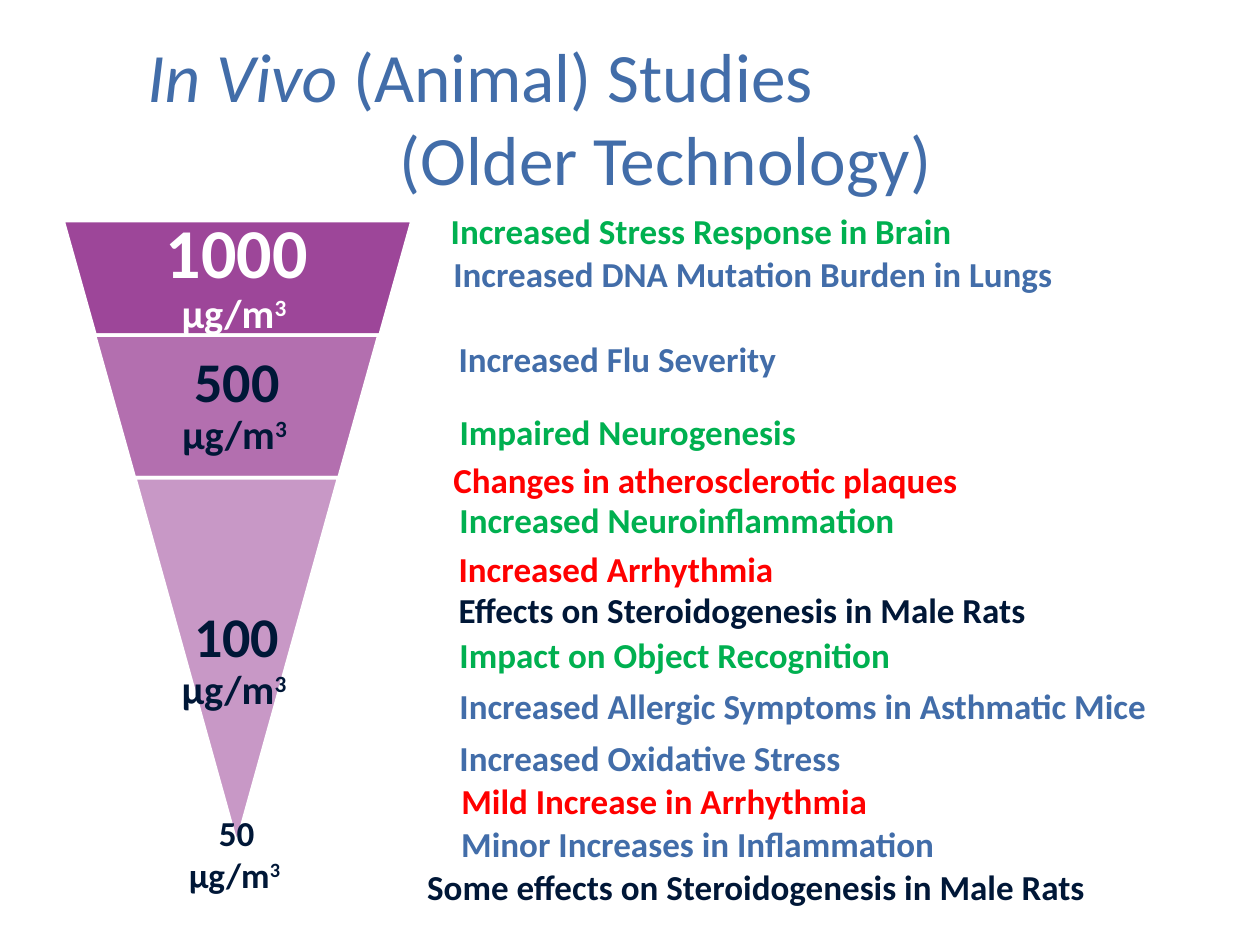
from lxml import etree
from pptx import Presentation
from pptx.dml.color import RGBColor
from pptx.enum.shapes import MSO_SHAPE
from pptx.enum.text import MSO_ANCHOR, MSO_AUTO_SIZE as FIT, PP_ALIGN
from pptx.oxml.ns import qn
from pptx.util import Pt

FONT = "Calibri"
WHITE = RGBColor(0xFF, 0xFF, 0xFF)
PURPLE = RGBColor(0x93, 0x32, 0x8E)
NAVY = RGBColor(0x00, 0x17, 0x37)
BLUE = RGBColor(0x42, 0x6D, 0xA9)
RED = RGBColor(0xFF, 0x00, 0x00)
GREEN = RGBColor(0x00, 0xB0, 0x50)

# Dose bands: (amount, left, top, width, height), slant, opacity %, size, colour, label left, label width
BANDS = [
    ("1000", (36, 126, 199.5, 65.5), 0.28, 90, 40, WHITE, 70.5, 129.5),
    ("500", (54, 191.5, 162.5, 81.5), 0.28, 70, 32, NAVY, 82.5, 106),
    ("100", (77, 273, 116.5, 209.5), 0.5, 50, 32, NAVY, 77, 116.5),
]

# Findings: text, left, top, width, colour
FINDINGS = [
    ("Increased Stress Response in Brain", 250.5, 116, 304, GREEN),
    ("Increased DNA Mutation Burden in Lungs", 252, 140.5, 360, BLUE),
    ("Increased Flu Severity", 255, 189.5, 198, BLUE),
    ("Impaired Neurogenesis", 255.5, 231, 209, GREEN),
    ("Changes in atherosclerotic plaques", 252, 258.5, 305, RED),
    ("Increased Neuroinflammation", 255.5, 281.5, 266, GREEN),
    ("Increased Arrhythmia", 255, 309.5, 201, RED),
    ("Effects on Steroidogenesis in Male Rats", 255, 332.5, 342, NAVY),
    ("Impact on Object Recognition", 255.5, 358.5, 263, GREEN),
    ("Increased Allergic Symptoms in Asthmatic Mice", 255.5, 387.5, 410.5, BLUE),
    ("Increased Oxidative Stress", 255.5, 417.5, 235, BLUE),
    ("Mild Increase in Arrhythmia", 256.5, 442, 248.5, RED),
    ("Minor Increases in Inflammation", 256.5, 466.5, 287.5, BLUE),
    ("Some effects on Steroidogenesis in Male Rats", 237, 491, 394.5, NAVY),
]


def add_run(p, text, size, color, **extra):
    r = p.add_run()
    r.text = text
    r.font.color.rgb = color
    for name, value in {"name": FONT, "size": Pt(size), "bold": True, **extra}.items():
        setattr(r.font, name, value)
    return r


def add_text_box(shapes, box, **frame):
    sp = shapes.add_textbox(*map(Pt, box))
    for name, value in {"word_wrap": True, **frame}.items():
        setattr(sp.text_frame, name, value)
    return sp.text_frame


def add_dose(p, amount, amount_size, unit_size, color):
    p.alignment = PP_ALIGN.CENTER
    add_run(p, amount + " ", amount_size, color)
    add_run(p, "µg/m", unit_size, color)
    r = add_run(p, "3 ", unit_size, color)
    r.font._element.set("baseline", "30000")


def add_title(slide, box):
    title = slide.shapes.title
    title.left, title.top, title.width, title.height = map(Pt, box)
    tf = title.text_frame
    for name, value in {"word_wrap": True, "auto_size": FIT.NONE,
                        "vertical_anchor": MSO_ANCHOR.MIDDLE}.items():
        setattr(tf, name, value)
    style = {"size": 39.6, "color": BLUE, "bold": False}
    # First line is indented, second is centred
    p = tf.paragraphs[0]
    p.alignment = PP_ALIGN.LEFT
    p._p.get_or_add_pPr().set("marL", str(Pt(41)))
    add_run(p, "In Vivo ", italic=True, **style)
    add_run(p, "(Animal) Studies", **style)
    p = tf.add_paragraph()
    p.alignment = PP_ALIGN.CENTER
    add_run(p, "(Older Technology)", **style)


def add_band(shapes, amount, box, slant, opacity, size, color, label_left, label_width):
    sp = shapes.add_shape(MSO_SHAPE.TRAPEZOID, *map(Pt, box))
    sp.rotation = 180
    sp.adjustments[0] = slant
    sp.shadow.inherit = False
    sp.fill.solid()
    sp.fill.fore_color.rgb = PURPLE
    clr = sp._element.spPr.find(qn("a:solidFill"))[0]
    etree.SubElement(clr, qn("a:alpha")).set("val", str(opacity * 1000))
    sp.line.color.rgb = WHITE
    sp.line.width = Pt(2)

    inset = Pt(size / 10)
    sides = ("left", "top", "right", "bottom")
    tf = add_text_box(shapes, (label_left, box[1], label_width, box[3]),
                      vertical_anchor=MSO_ANCHOR.MIDDLE,
                      **{f"margin_{side}": inset for side in sides})
    tf.paragraphs[0].line_spacing = 0.9
    add_dose(tf.paragraphs[0], amount, size, 23, color)


def add_funnel(slide):
    group = slide.shapes.add_group_shape()
    for band in BANDS:
        add_band(group.shapes, *band)
    # Lowest dose, below the tip
    tf = add_text_box(slide.shapes, (98.5, 460, 73.5, 80))
    add_dose(tf.paragraphs[0], "50", 20, 20, NAVY)


def add_findings(slide):
    for text, left, top, width, color in FINDINGS:
        tf = add_text_box(slide.shapes, (left, top, width, 31.5),
                          word_wrap=False, auto_size=FIT.SHAPE_TO_FIT_TEXT)
        add_run(tf.paragraphs[0], text, 20, color)


def main():
    prs = Presentation()
    prs.slide_width, prs.slide_height = Pt(720), Pt(540)
    slide = prs.slides.add_slide(prs.slide_layouts[5])
    add_title(slide, (36, 21.5, 648, 90))
    add_funnel(slide)
    add_findings(slide)
    prs.save("out.pptx")


if __name__ == "__main__":
    main()
